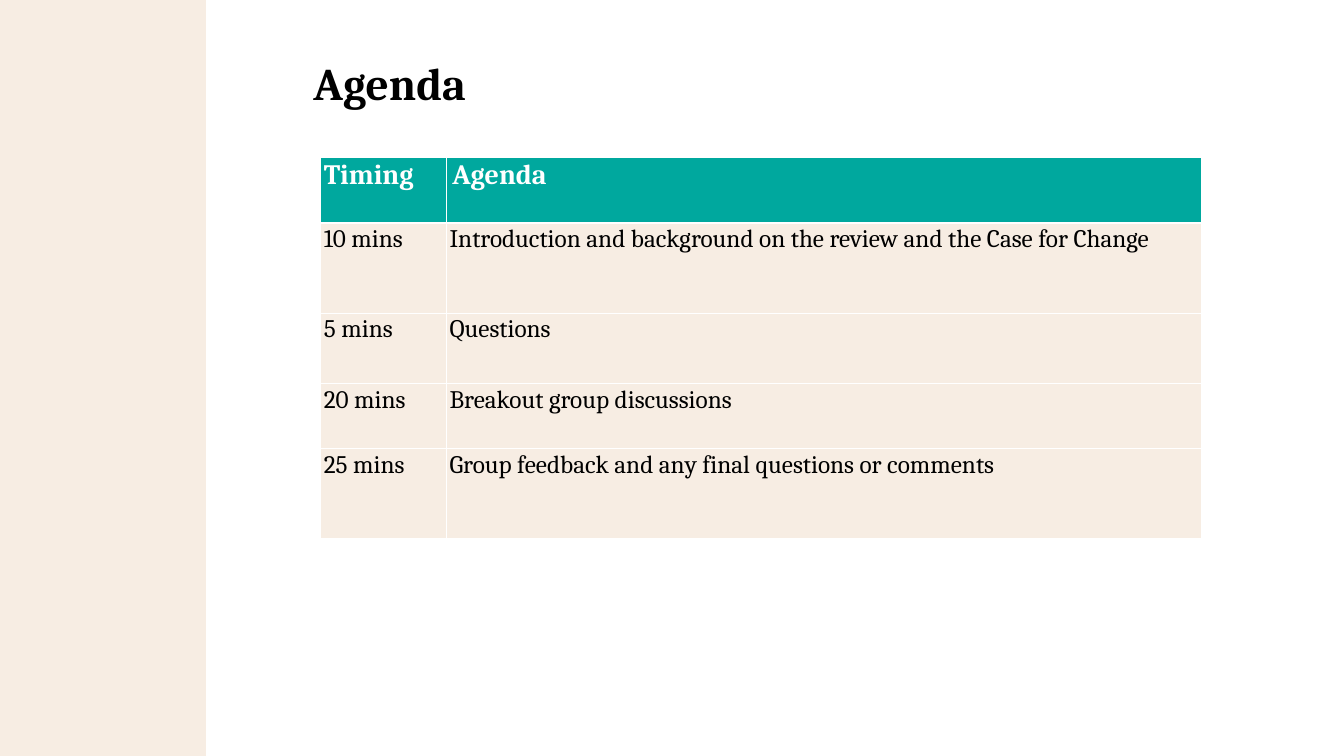
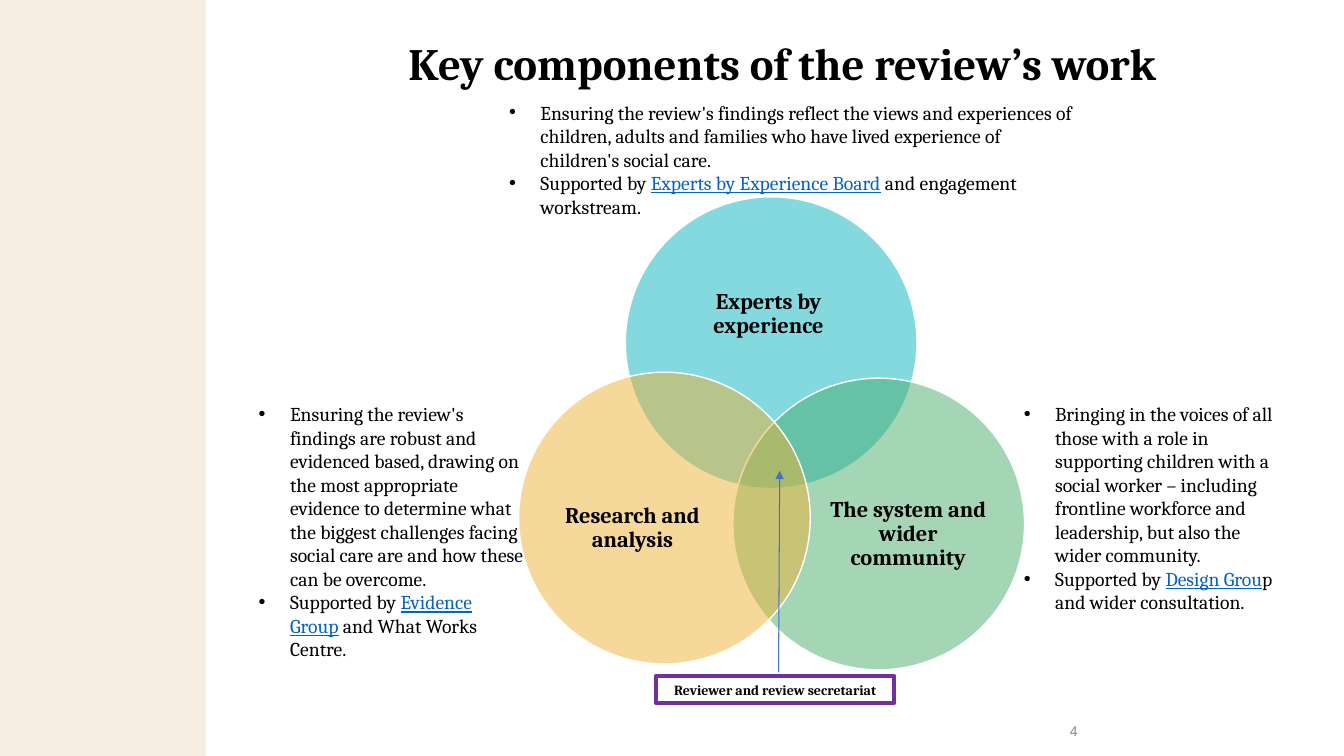
from lxml.etree import SubElement
from pptx import Presentation
from pptx.dml.color import RGBColor
from pptx.enum.shapes import MSO_CONNECTOR, MSO_SHAPE
from pptx.enum.text import MSO_ANCHOR, MSO_AUTO_SIZE, PP_ALIGN
from pptx.oxml.ns import qn
from pptx.util import Cm, Pt

BLACK = RGBColor(0x00, 0x00, 0x00)
WHITE = RGBColor(0xFF, 0xFF, 0xFF)
CREAM = RGBColor(0xF7, 0xED, 0xE3)
TEAL = RGBColor(0x00, 0xA8, 0x9E)
CYAN = RGBColor(0x06, 0xB2, 0xBF)
GREEN = RGBColor(0x47, 0xAB, 0x69)
AMBER = RGBColor(0xF0, 0xB1, 0x33)
PURPLE = RGBColor(0x70, 0x30, 0xA0)
BLUE = RGBColor(0x44, 0x72, 0xC4)
LINK = RGBColor(0x05, 0x63, 0xC1)
GREY = RGBColor(0x88, 0x88, 0x88)

SLIDE_W, SLIDE_H = 33.87, 19.05
BAND_W = 5.19
HEAD = {"size": Pt(20), "bold": True, "color": WHITE}
CELL = {"size": Pt(18), "bold": False}
BULLET = {"size": Pt(14), "bold": False}
LINKED = BULLET | {"color": LINK, "underline": True}
CIRCLE_LABEL = {"size": Pt(16), "bold": True}
SMALL_LABEL = {"size": Pt(10), "bold": True}
NUMBER = {"size": Pt(10), "name": "Arial", "color": GREY}


# Shared helpers
def add_run(p, text, style):
    r = p.add_run()
    r.text = text
    for key, value in ({"name": "Cambria", "color": BLACK} | style).items():
        if key == "color":
            r.font.color.rgb = value
        else:
            setattr(r.font, key, value)


def place(shape, box):
    shape.left, shape.top, shape.width, shape.height = (Cm(v) for v in box)


def setup_frame(tf, anchor, margins=(0.25, 0.13)):
    frame = {"word_wrap": True, "auto_size": MSO_AUTO_SIZE.NONE, "vertical_anchor": anchor,
             "margin_left": Cm(margins[0]), "margin_right": Cm(margins[0]),
             "margin_top": Cm(margins[1]), "margin_bottom": Cm(margins[1])}
    for key, value in frame.items():
        setattr(tf, key, value)


def add_label(s, box, text, style, align=PP_ALIGN.CENTER, spacing=1.0, margins=(0, 0)):
    tb = s.shapes.add_textbox(*(Cm(v) for v in box))
    setup_frame(tb.text_frame, MSO_ANCHOR.MIDDLE, margins)
    p = tb.text_frame.paragraphs[0]
    p.alignment, p.line_spacing = align, spacing
    add_run(p, text, style)
    return tb


def add_shape(s, kind, box, fill):
    sp = s.shapes.add_shape(kind, *(Cm(v) for v in box))
    sp.shadow.inherit = False
    sp.fill.solid()
    sp.fill.fore_color.rgb = fill
    sp.line.fill.background()
    return sp


def set_title(s, box, text, align, size=32):
    place(s.shapes.title, box)
    tf = s.shapes.title.text_frame
    setup_frame(tf, MSO_ANCHOR.MIDDLE)
    p = tf.paragraphs[0]
    p.alignment, p.line_spacing = align, 0.9
    add_run(p, text, {"size": Pt(size), "bold": True})


def add_master_band(prs, s):
    """Draw the side band once and hand it to the slide master."""
    band = add_shape(s, MSO_SHAPE.RECTANGLE, (0, 0, BAND_W, SLIDE_H), CREAM)
    prs.slide_master.shapes[0].element.addprevious(band.element)


# Agenda table
def set_borders(cell, widths):
    tc_pr = cell._tc.get_or_add_tcPr()
    for i, (side, width) in enumerate(widths.items()):
        ln = SubElement(tc_pr, qn(f"a:ln{side}"), w=str(Pt(width)))
        fill = SubElement(ln, qn("a:solidFill"))
        SubElement(fill, qn("a:srgbClr"), val=str(WHITE))
        tc_pr.insert(i, ln)


def add_agenda(s, left, top, col_widths, row_heights, rows):
    frame = s.shapes.add_table(len(rows), len(col_widths), Cm(left), Cm(top),
                               Cm(sum(col_widths)), Cm(sum(row_heights)))
    table = frame.table
    table.horz_banding = False
    for column, width in zip(table.columns, col_widths):
        column.width = Cm(width)
    for i, (row, height) in enumerate(zip(rows, row_heights)):
        table.rows[i].height = Cm(height)
        for j, text in enumerate(row):
            cell = table.cell(i, j)
            cell.margin_left = Cm(0.15 if (i, j) == (0, 1) else 0.08)
            cell.margin_right = Cm(0.08)
            cell.margin_top = cell.margin_bottom = Cm(0.05)
            cell.fill.solid()
            cell.fill.fore_color.rgb = CREAM if i else TEAL
            set_borders(cell, {"L": 0.75, "R": 0.75, "T": 1.5 if i == 1 else 0.75,
                               "B": 0.75 if i else 1.5})
            add_run(cell.text_frame.paragraphs[0], text, CELL if i else HEAD)


# Three overlapping circles
def add_circles(s, left, top, diameter, circles):
    for dx, dy, color, label_box, text in circles:
        x, y = left + dx, top + dy
        sp = add_shape(s, MSO_SHAPE.OVAL, (x, y, diameter, diameter), color)
        rgb = sp.element.spPr.find(qn("a:solidFill")).find(qn("a:srgbClr"))
        SubElement(rgb, qn("a:alpha"), val="49000")
        sp.line.color.rgb = WHITE
        sp.line.width = Pt(1)
        lx, ly, w, h = label_box
        add_label(s, (x + lx, y + ly, w, h), text, CIRCLE_LABEL, spacing=0.9)


def add_centre_note(s, box, text, arrow_start, arrow_end):
    """Outlined note with an arrow up to where the circles meet."""
    note = add_label(s, box, text, SMALL_LABEL)
    note.line.color.rgb = PURPLE
    note.line.width = Pt(3)
    arrow = s.shapes.add_connector(MSO_CONNECTOR.STRAIGHT,
                                   *(Cm(v) for v in arrow_start + arrow_end))
    arrow.line.color.rgb = BLUE
    arrow.line.width = Pt(0.75)
    sp_pr = arrow.element.spPr
    SubElement(sp_pr.find(qn("a:ln")), qn("a:tailEnd"), type="triangle")
    SubElement(sp_pr, qn("a:effectLst"))


def fill_list(ph, box, items):
    """Bulleted list; each item is a list of (text, style) runs."""
    place(ph, box)
    ph.element.getparent().append(ph.element)  # in front of the circles
    tf = ph.text_frame
    setup_frame(tf, MSO_ANCHOR.TOP)
    for i, item in enumerate(items):
        p = tf.add_paragraph() if i else tf.paragraphs[0]
        p.space_before, p.line_spacing = Pt(0), 1.0
        p_pr = p._p.get_or_add_pPr()
        p_pr.set("marL", str(Cm(0.79)))
        p_pr.set("indent", str(-Cm(0.79)))
        SubElement(p_pr, qn("a:buFont"), typeface="Arial")
        SubElement(p_pr, qn("a:buChar"), char="•")
        for text, style in item:
            add_run(p, text, style)


# Slides
def build_agenda_slide(prs):
    s = prs.slides.add_slide(prs.slide_layouts.get_by_name("Title Only"))
    add_master_band(prs, s)
    set_title(s, (7.65, 1.58, 23.9, 1.19), "Agenda", PP_ALIGN.LEFT, 32.4)
    add_agenda(s, 8.08, 3.96, (3.17, 19.02), (1.65, 2.28, 1.78, 1.63, 2.26), [
        ("Timing", "Agenda"),
        ("10 mins", "Introduction and background on the review and the Case for Change"),
        ("5 mins", "Questions"),
        ("20 mins", "Breakout group discussions"),
        ("25 mins", "Group feedback and any final questions or comments"),
    ])


def build_components_slide(prs):
    s = prs.slides.add_slide(prs.slide_layouts.get_by_name("Comparison"))
    set_title(s, (6.4, 0.76, 26.64, 1.8), "Key components of the review’s work",
              PP_ALIGN.CENTER)
    add_circles(s, 13.07, 4.96, 7.35, [
        (2.69, 0, CYAN, (1.41, 1.3, 4.4, 3.3), "Experts by experience"),
        (5.4, 4.57, GREEN, (2.26, 1.91, 4.32, 4.04), "The system and wider community"),
        (0, 4.42, AMBER, (0.66, 1.92, 4.42, 4.04), "Research and analysis"),
    ])
    add_centre_note(s, (16.54, 17.03, 5.99, 0.69), "Reviewer and review secretariat",
                    (19.62, 16.94), (19.65, 11.86))

    # Lists beside each circle: box, purpose, linked group, rest of the sentence
    side_top, side_w, side_h = 10, 7.21, 8.64
    lists = [
        ((6.27, side_top, side_w, side_h),
         "Ensuring the review's findings are robust and evidenced based, drawing on the most "
         "appropriate evidence to determine what the biggest challenges facing social care "
         "are and how these can be overcome.",
         "Evidence Group", " and What Works Centre."),
        ((12.58, 2.4, 14.94, 3.84),
         "Ensuring the review's findings reflect the views and experiences of children, "
         "adults and families who have lived experience of children's social care.",
         "Experts by Experience Board", " and engagement workstream."),
        ((25.55, side_top, side_w, side_h),
         "Bringing in the voices of all those with a role in supporting children with a "
         "social worker – including frontline workforce and leadership, but also the wider "
         "community.",
         "Design Grou", "p and wider consultation."),
    ]
    *bodies, spare = [ph for ph in s.placeholders if ph.placeholder_format.idx in range(1, 5)]
    spare.element.getparent().remove(spare.element)
    for ph, (box, purpose, group, rest) in zip(bodies, lists):
        fill_list(ph, box, [[(purpose, BULLET)],
                            [("Supported by ", BULLET), (group, LINKED), (rest, BULLET)]])

    add_label(s, (25.73, 17.91, 1.68, 1.02), "4", NUMBER, PP_ALIGN.RIGHT,
              margins=(0.25, 0.13))


def main():
    prs = Presentation()
    prs.slide_width, prs.slide_height = Cm(SLIDE_W), Cm(SLIDE_H)
    build_agenda_slide(prs)
    build_components_slide(prs)
    prs.save("out.pptx")


if __name__ == "__main__":
    main()
